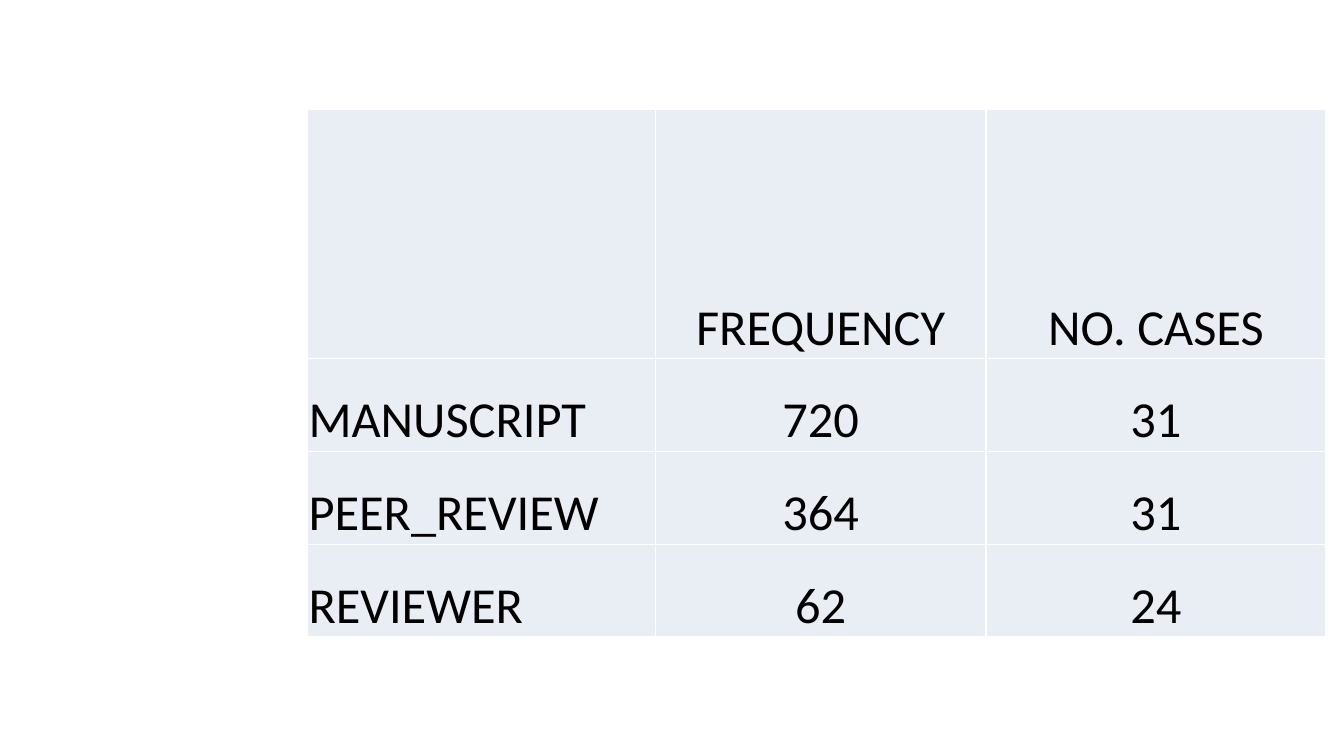
from lxml.etree import SubElement as Sub
from pptx import Presentation
from pptx.dml.color import RGBColor as Rgb
from pptx.enum.text import MSO_ANCHOR as Anchor, PP_ALIGN as Align
from pptx.oxml.ns import qn
from pptx.util import Inches, Pt

HUES = {"text": "000000", "cell": "E9EDF4", "rule": "FFFFFF"}
ROWS = [
    ["", "FREQUENCY", "NO. CASES"],
    ["MANUSCRIPT", "720", "31"],
    ["PEER_REVIEW", "364", "31"],
    ["REVIEWER", "62", "24"],
]
WIDTHS = [3.45, 3.28, 3.37]
HEIGHTS = [2.47] + [0.92] * 3


class Deck:
    font = "Calibri"
    size = 36
    pad = 0.01

    def __init__(self):
        self.prs = Presentation()
        self.prs.slide_width = Inches(13.33)
        self.prs.slide_height = Inches(7.5)
        self.slide = self.prs.slides.add_slide(self.prs.slide_layouts[6])

    def table(self, left, top, rows, widths, heights):
        frame = self.slide.shapes.add_table(
            len(rows), len(widths), Inches(left), Inches(top),
            Inches(sum(widths)), Inches(sum(heights)))
        grid = frame.table
        for col, width in zip(grid.columns, widths):
            col.width = Inches(width)
        for row, height in zip(grid.rows, heights):
            row.height = Inches(height)
        for r, row in enumerate(rows):
            for c, text in enumerate(row):
                self.cell(grid.cell(r, c), text, Align.CENTER if c else Align.LEFT)

    def cell(self, cell, text, align):
        cell.margin_left = cell.margin_right = cell.margin_top = Inches(self.pad)
        cell.margin_bottom = 0
        cell.vertical_anchor = Anchor.BOTTOM
        self.edges(cell)
        cell.fill.solid()
        cell.fill.fore_color.rgb = Rgb.from_string(HUES["cell"])
        if text:
            para = cell.text_frame.paragraphs[0]
            para.alignment = align
            run = para.add_run()
            run.text = text
            run.font.name = self.font
            run.font.size = Pt(self.size)
            run.font.bold = False
            run.font.color.rgb = Rgb.from_string(HUES["text"])

    def edges(self, cell):
        props = cell._tc.get_or_add_tcPr()
        for side in "LRTB":
            line = Sub(props, qn(f"a:ln{side}"), w=str(Pt(1)))
            fill = Sub(line, qn("a:solidFill"))
            Sub(fill, qn("a:srgbClr"), val=HUES["rule"])


def main():
    deck = Deck()
    deck.table(3.05, 1.09, ROWS, WIDTHS, HEIGHTS)
    deck.prs.save("out.pptx")


if __name__ == "__main__":
    main()
